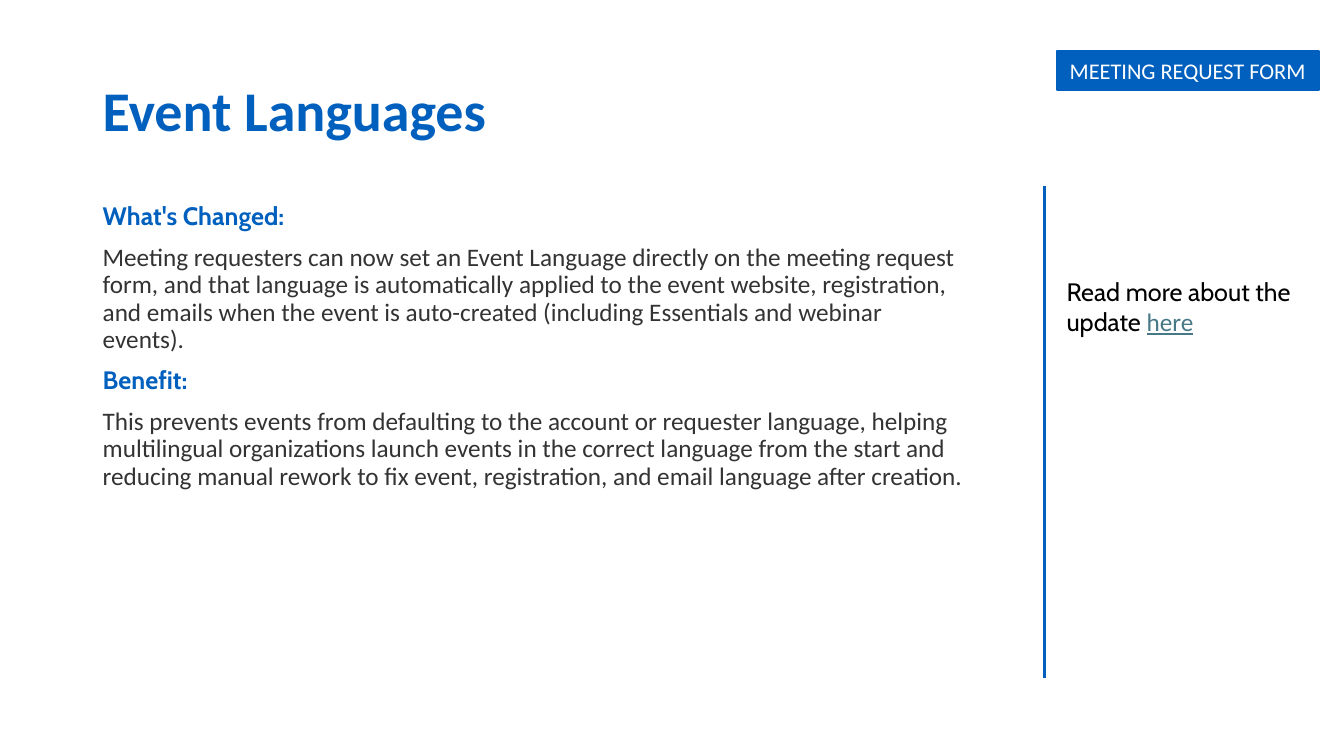
from lxml import etree
from pptx import Presentation
from pptx.dml.color import RGBColor
from pptx.enum.shapes import MSO_CONNECTOR, MSO_SHAPE
from pptx.enum.text import MSO_ANCHOR, MSO_AUTO_SIZE, PP_ALIGN
from pptx.oxml.ns import qn
from pptx.util import Inches, Pt

COLORS = {"blue": "0160BE", "body": "333333", "black": "000000",
          "link": "467886", "white": "FFFFFF"}
HEADING_FONT = "Cabin"
BODY_FONT = "Calibri"

SECTIONS = [
    ("What's Changed:",
     "Meeting requesters can now set an Event Language directly on the meeting "
     "request form, and that language is automatically applied to the event "
     "website, registration, and emails when the event is auto-created "
     "(including Essentials and webinar events)."),
    ("Benefit:",
     "This prevents events from defaulting to the account or requester language, "
     "helping multilingual organizations launch events in the correct language "
     "from the start and reducing manual rework to fix event, registration, and "
     "email language after creation."),
]


def color(name):
    return RGBColor.from_string(COLORS[name])


class SlideBuilder:
    def __init__(self, slide):
        self.slide = slide

    def style(self, run, size, font_name, color_name, bold=False, underline=False):
        font = run.font
        font.size = Pt(size)
        font.name = font_name
        font.color.rgb = color(color_name)
        font.bold = bold
        font.underline = underline

    def text_frame(self, left, top, width, height):
        """Add a wrapping text box and return its text frame."""
        shape = self.slide.shapes.add_textbox(
            Inches(left), Inches(top), Inches(width), Inches(height))
        shape.text_frame.word_wrap = True
        return shape.text_frame

    def title(self, text):
        frame = self.text_frame(0.92, 0.4, 9.09, 1.45)
        frame.vertical_anchor = MSO_ANCHOR.MIDDLE
        frame.text = text
        paragraph = frame.paragraphs[0]
        paragraph.line_spacing = 0.9
        self.style(paragraph.runs[0], 40, BODY_FONT, "blue", bold=True)

    def body(self, sections):
        frame = self.text_frame(0.92, 1.97, 8.78, 4.98)
        frame.text = "\n".join(text for section in sections for text in section)
        for index, paragraph in enumerate(frame.paragraphs):
            paragraph.line_spacing = 0.9
            if index:
                paragraph.space_before = Pt(10)
            if index % 2 == 0:
                self.style(paragraph.runs[0], 18, HEADING_FONT, "blue", bold=True)
            else:
                self.style(paragraph.runs[0], 18, BODY_FONT, "body")

    def divider(self, x, top, bottom):
        line = self.slide.shapes.add_connector(
            MSO_CONNECTOR.STRAIGHT, Inches(x), Inches(top), Inches(x), Inches(bottom))
        line.line.color.rgb = color("blue")
        line.line.width = Pt(2.25)
        etree.SubElement(line._element.spPr, qn("a:effectLst"))

    def read_more(self, lead, link_text):
        frame = self.text_frame(10.48, 2.69, 2.5, 0.71)
        frame.auto_size = MSO_AUTO_SIZE.SHAPE_TO_FIT_TEXT
        frame.text = lead
        paragraph = frame.paragraphs[0]
        self.style(paragraph.runs[0], 18, HEADING_FONT, "black")
        run = paragraph.add_run()
        run.text = link_text
        self.style(run, 18, BODY_FONT, "link", underline=True)

    def tag(self, text):
        shape = self.slide.shapes.add_shape(
            MSO_SHAPE.RECTANGLE, Inches(10.48), Inches(0.51), Inches(2.6), Inches(0.38))
        shape.shadow.inherit = False
        shape.fill.solid()
        shape.fill.fore_color.rgb = color("blue")
        shape.line.color.rgb = color("blue")
        shape.line.width = Pt(1.5)
        frame = shape.text_frame
        frame.word_wrap = True
        frame.vertical_anchor = MSO_ANCHOR.MIDDLE
        frame.text = text
        paragraph = frame.paragraphs[0]
        paragraph.alignment = PP_ALIGN.CENTER
        self.style(paragraph.runs[0], 16, BODY_FONT, "white")


def main():
    presentation = Presentation()
    presentation.slide_width = Inches(13.33)
    presentation.slide_height = Inches(7.5)
    builder = SlideBuilder(presentation.slides.add_slide(presentation.slide_layouts[6]))
    builder.title("Event Languages")
    builder.body(SECTIONS)
    builder.divider(10.36, 1.85, 6.73)
    builder.read_more("Read more about the update ", "here")
    builder.tag("MEETING REQUEST FORM")
    presentation.save("out.pptx")


if __name__ == "__main__":
    main()
